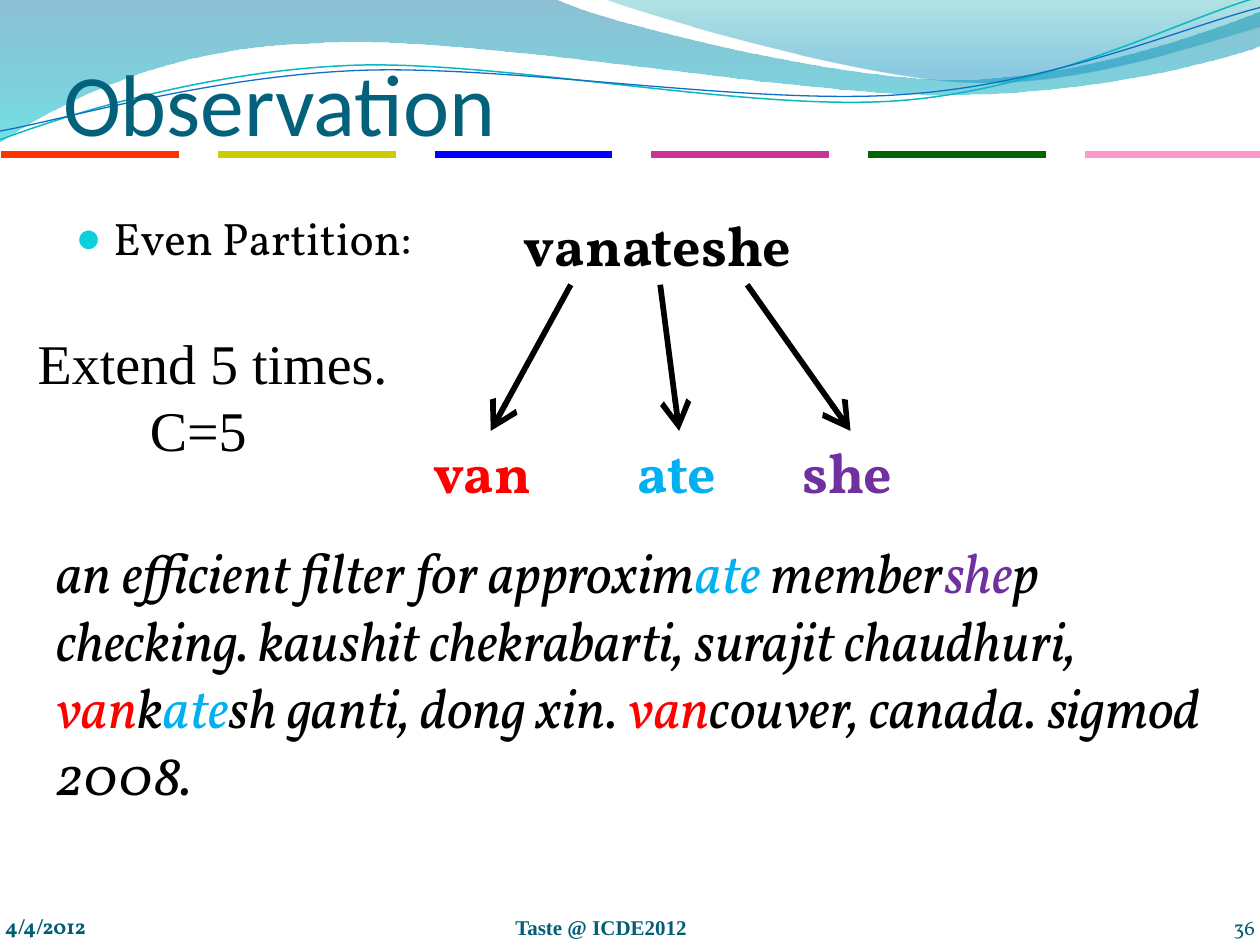
from dataclasses import dataclass

from lxml import etree
from pptx import Presentation
from pptx.dml.color import RGBColor
from pptx.enum.shapes import MSO_CONNECTOR
from pptx.enum.text import MSO_ANCHOR, MSO_AUTO_SIZE, PP_ALIGN
from pptx.oxml.ns import qn
from pptx.util import Pt

PX = 9144  # 100 px to the inch
STRAIGHT = MSO_CONNECTOR.STRAIGHT
TOP, BOTTOM = MSO_ANCHOR.TOP, MSO_ANCHOR.BOTTOM
LEFT, RIGHT = PP_ALIGN.LEFT, PP_ALIGN.RIGHT
GROW, FIXED = MSO_AUTO_SIZE.SHAPE_TO_FIT_TEXT, MSO_AUTO_SIZE.NONE
TOP_SIDE = 0


@dataclass(frozen=True)
class Theme:
    heading_font: str = "Calibri"
    body_font: str = "Vollkorn"
    serif_font: str = "Times New Roman"
    title_size: int = 50
    large_size: int = 32
    body_size: int = 26
    footer_size: int = 12
    ink: str = "000000"
    title: str = "04617B"
    footer: str = "045D75"
    bullet: str = "0BD0D9"
    van: str = "FF0000"
    ate: str = "00B0F0"
    she: str = "7030A0"
    wide_wave: tuple = ((0, "0074A1", 45), (100, "00C6CF", 55))
    right_wave: tuple = ((0, "00A1A9", 30), (80, "008BBF", 45))
    teal_line: str = "0AB8BF"
    blue_line: str = "0F6FC6"
    stripes: tuple = ("FF3300", "CCCC00", "0000FF", "CC3399", "006600", "FF99CC")


THEME = Theme()


def color(code):
    return RGBColor.from_string(code)


def add_element(parent, tag, **attributes):
    return etree.SubElement(parent, qn(tag), attributes)


def place(shape, left, top, width, height):
    shape.left, shape.top = left * PX, top * PX
    shape.width, shape.height = width * PX, height * PX


def add_bullet(paragraph, indent):
    properties = paragraph._p.get_or_add_pPr()
    properties.set("marL", str(indent * PX))
    properties.set("indent", str(-indent * PX))
    add_element(add_element(properties, "a:buClr"), "a:srgbClr", val=THEME.bullet)
    add_element(properties, "a:buSzPct", val="95000")
    add_element(properties, "a:buChar", char="●")


def write_text(shape, paragraphs, size, font=THEME.body_font, ink=THEME.ink, bold=False,
               italic=False, align=LEFT, anchor=TOP, insets=(10, 5, 10, 5),
               auto_size=FIXED, bullet_indent=0, margins=()):
    """Each paragraph is a string or a list of (text, colour) runs."""
    frame = shape.text_frame
    frame.word_wrap = True
    frame.auto_size = auto_size
    frame.vertical_anchor = anchor
    frame.margin_left, frame.margin_top, frame.margin_right, frame.margin_bottom = (
        inset * PX for inset in insets)
    for index, content in enumerate(paragraphs):
        paragraph = frame.add_paragraph() if index else frame.paragraphs[0]
        if bullet_indent:
            add_bullet(paragraph, bullet_indent)
        if margins:
            paragraph._p.get_or_add_pPr().set("marL", str(margins[index] * PX))
        paragraph.alignment = align
        paragraph.space_before = Pt(0)
        runs = [(content, ink)] if isinstance(content, str) else content
        for text, run_color in runs:
            run = paragraph.add_run()
            run.text = text
            run.font.name, run.font.size = font, Pt(size)
            run.font.bold, run.font.italic = bold, italic
            run.font.color.rgb = color(run_color)


def add_text(slide, box, paragraphs, **text_format):
    shape = slide.shapes.add_textbox(*(length * PX for length in box))
    write_text(shape, paragraphs, **text_format)
    return shape


def add_line(slide, start, end, ink, width, arrow=False):
    line = slide.shapes.add_connector(STRAIGHT, *(value * PX for value in (*start, *end)))
    line.line.color.rgb = color(ink)
    line.line.width = Pt(width)
    if arrow:
        add_element(line.line._get_or_add_ln(), "a:tailEnd", type="arrow", w="lg", len="lg")
    add_element(line._element.spPr, "a:effectLst")
    return line


def bend(shape, segments):
    """Turn the straight steps of each three-point segment into one cubic curve."""
    steps = iter(list(shape._element.iter(qn("a:lnTo"))))
    for segment in segments:
        first, *others = [next(steps) for _ in segment]
        if others:
            curve = etree.Element(qn("a:cubicBezTo"))
            first.addprevious(curve)
            for step in (first, *others):
                curve.append(step[0])
                step.getparent().remove(step)


def add_wave(slide, start, segments, stops=None, ink=None, width=0):
    """A segment has one end point (line) or two controls and an end point (curve)."""
    builder = slide.shapes.build_freeform(*start, scale=PX)
    builder.add_line_segments([point for segment in segments for point in segment],
                              close=bool(stops))
    wave = builder.convert_to_shape()
    bend(wave, segments)
    wave.shadow.inherit = False
    if not stops:
        wave.fill.background()
        wave.line.color.rgb = color(ink)
        wave.line.width = Pt(width)
        return
    wave.line.fill.background()
    wave.fill.gradient()
    wave.fill.gradient_angle = 270
    for stop, (position, code, opacity) in zip(wave.fill.gradient_stops, stops):
        stop.position = position / 100
        stop.color.rgb = color(code)
        add_element(stop._gs.find(qn("a:srgbClr")), "a:alpha", val=str(opacity * 1000))


def add_waves(slide):
    add_wave(slide, (0, 0), [
        [(440, -1)], [(476, 17), (664, 63), (758, 63)],
        [(853, 63), (958, 26), (1000, 9)], [(1001, 36)],
        [(983, 44), (870, 76), (746, 75)], [(622, 75), (382, 28), (257, 34)],
        [(129, 36), (46, 83), (-1, 113)], [(0, 0)]], stops=THEME.wide_wave)
    add_wave(slide, (479, -1), [
        [(509, 11), (682, 62), (769, 65)], [(856, 69), (961, 32), (1000, 21)],
        [(1000, 0)], [(479, -1)]], stops=THEME.right_wave)
    add_wave(slide, (0, 111), [
        [(48, 93), (158, 57), (277, 52)], [(395, 47), (593, 89), (713, 80)],
        [(833, 71), (938, 15), (998, -2)]], ink=THEME.teal_line, width=0.85)
    add_wave(slide, (0, 104), [
        [(47, 96), (164, 61), (283, 56)], [(403, 51), (597, 84), (717, 75)],
        [(836, 67), (941, 21), (1000, 6)]], ink=THEME.blue_line, width=0.75)


def add_stripes(slide, left, top, pitch, length):
    for index, ink in enumerate(THEME.stripes):
        start = left + index * pitch
        add_line(slide, (start, top), (start + length, top), ink, 4)


def add_partition(slide, left, top):
    """The word at the top, with one arrow to each of its three parts."""
    word_format = dict(size=THEME.large_size, bold=True, auto_size=GROW)
    add_text(slide, (left + 72, top, 263, 64), ["vanateshe"], **word_format)
    parts = (("van", THEME.van, 0, 111, 119), ("ate", THEME.ate, 162, 86, 190),
             ("she", THEME.she, 293, 96, 259))
    for text, ink, offset, width, arrow_start in parts:
        label = add_text(slide, (left + offset, top + 180, width, 64), [text],
                         ink=ink, **word_format)
        arrow = add_line(slide, (left + arrow_start, top + 64),
                         (left + offset + width // 2, top + 180), THEME.ink, 3.25, arrow=True)
        arrow.end_connect(label, TOP_SIDE)


def add_example(slide, box):
    ink, van, ate, she = THEME.ink, THEME.van, THEME.ate, THEME.she
    add_text(slide, box, [
        [("an efficient filter for approxim", ink), ("ate ", ate), ("member", ink),
         ("she", she), ("p", ink)],
        [("checking. kaushit chekrabarti, surajit chaudhuri, ", ink), ("van", van),
         ("k", ink), ("ate", ate), ("sh ganti, dong xin. ", ink), ("van", van),
         ("couver, canada. sigmod 2008.", ink)],
    ], size=THEME.large_size, italic=True, auto_size=GROW)


def add_footer(slide, top, height):
    footer_format = dict(size=THEME.footer_size, ink=THEME.footer, anchor=BOTTOM,
                         insets=(0, 0, 0, 0))
    add_text(slide, (4, top - 1, 233, height), ["4/4/2012"], bold=True, **footer_format)
    add_text(slide, (409, top, 367, height), ["Taste @ ICDE2012"], bold=True,
             font=THEME.serif_font, **footer_format)
    add_text(slide, (913, top, 83, height), ["36"], align=RIGHT, **footer_format)


def main():
    presentation = Presentation()
    presentation.slide_width, presentation.slide_height = 1000 * PX, 750 * PX
    slide = presentation.slides.add_slide(presentation.slide_layouts[1])
    title, body = slide.placeholders
    add_waves(slide)
    add_stripes(slide, left=1, top=123, pitch=172, length=141)
    for placeholder in (title, body):  # bring the text in front of the waves
        slide.shapes._spTree.append(placeholder._element)
    place(title, 50, -3, 900, 125)
    write_text(title, ["Observation"], size=THEME.title_size, font=THEME.heading_font,
               ink=THEME.title, anchor=BOTTOM, insets=(0, 5, 0, 0))
    place(body, 50, 162, 900, 480)
    write_text(body, ["Even Partition:"], size=THEME.body_size, bullet_indent=30)
    add_partition(slide, left=334, top=162)
    add_example(slide, (35, 422, 933, 226))
    add_text(slide, (20, 256, 301, 118), ["Extend 5 times.", "C=5"], size=THEME.large_size,
             font=THEME.serif_font, auto_size=GROW, margins=(0, 89))
    add_footer(slide, top=706, height=40)
    presentation.save("out.pptx")


if __name__ == "__main__":
    main()
